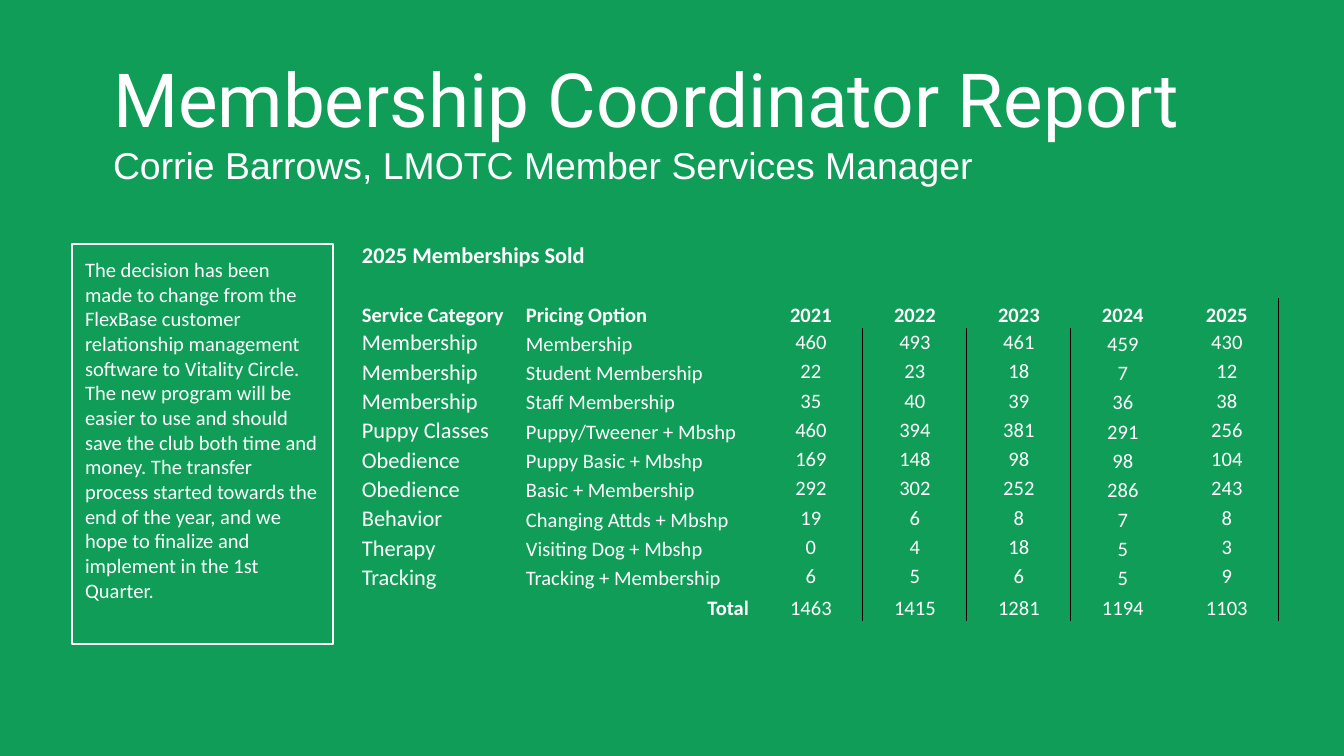
from lxml.etree import SubElement
from pptx import Presentation
from pptx.dml.color import RGBColor
from pptx.enum.shapes import MSO_SHAPE
from pptx.enum.text import MSO_ANCHOR, PP_ALIGN
from pptx.oxml.ns import qn
from pptx.util import Pt

COLORS = {"background": "0F9D58", "text": "FFFFFF", "rule": "000000"}
EMU_PER_PX = 914400 / 134.4
YEARS = ["2021", "2022", "2023", "2024", "2025"]
MEMBERSHIPS = [
    ("Membership", "Membership", 460, 493, 461, 459, 430),
    ("Membership", "Student Membership", 22, 23, 18, 7, 12),
    ("Membership", "Staff Membership", 35, 40, 39, 36, 38),
    ("Puppy Classes", "Puppy/Tweener + Mbshp", 460, 394, 381, 291, 256),
    ("Obedience", "Puppy Basic + Mbshp", 169, 148, 98, 98, 104),
    ("Obedience", "Basic + Membership", 292, 302, 252, 286, 243),
    ("Behavior", "Changing Attds + Mbshp", 19, 6, 8, 7, 8),
    ("Therapy", "Visiting Dog + Mbshp", 0, 4, 18, 5, 3),
    ("Tracking", "Tracking + Membership", 6, 5, 6, 5, 9),
]
TOTALS = [1463, 1415, 1281, 1194, 1103]
ANNOUNCEMENT = (
    "The decision has been made to change from the FlexBase customer "
    "relationship management software to Vitality Circle. The new program "
    "will be easier to use and should save the club both time and money. "
    "The transfer process started towards the end of the year, and we hope "
    "to finalize and implement in the 1st Quarter."
)


def px(length):
    return round(length * EMU_PER_PX)


def color(name):
    return RGBColor.from_string(COLORS[name])


def write_text(paragraph, text, size=11, font="Calibri", bold=False,
               align=PP_ALIGN.LEFT):
    paragraph.alignment = align
    run = paragraph.add_run()
    run.text = text
    run.font.size = Pt(size)
    run.font.name = font
    run.font.bold = bold
    run.font.color.rgb = color("text")


class SlideBuilder:
    margin = 13
    cell_margin = 10
    frame_width = 0.75
    rule_width = 0.5

    def __init__(self, slide):
        self.slide = slide
        slide.background.fill.solid()
        slide.background.fill.fore_color.rgb = color("background")

    def prepare_frame(self, frame, anchor):
        frame.word_wrap = True
        frame.vertical_anchor = anchor
        frame.margin_left = frame.margin_right = px(self.margin)
        frame.margin_top = frame.margin_bottom = px(self.margin)
        return frame

    def heading(self, left, top, width, height, title, subtitle):
        box = self.slide.shapes.add_textbox(px(left), px(top), px(width), px(height))
        frame = self.prepare_frame(box.text_frame, MSO_ANCHOR.MIDDLE)
        write_text(frame.paragraphs[0], title, size=40, font="Roboto")
        write_text(frame.add_paragraph(), subtitle, size=20, font="Arial")

    def framed_note(self, left, top, width, height, text):
        shape = self.slide.shapes.add_shape(
            MSO_SHAPE.RECTANGLE, px(left), px(top), px(width), px(height))
        shape.shadow.inherit = False
        shape.fill.background()
        shape.line.color.rgb = color("text")
        shape.line.width = Pt(self.frame_width)
        frame = self.prepare_frame(shape.text_frame, MSO_ANCHOR.TOP)
        write_text(frame.paragraphs[0], text)

    def table(self, left, top, column_widths, row_heights):
        frame = self.slide.shapes.add_table(
            len(row_heights), len(column_widths), px(left), px(top),
            px(sum(column_widths)), px(sum(row_heights)))
        table = frame.table
        table.first_row = table.horz_banding = False
        for column, width in zip(table.columns, column_widths):
            column.width = px(width)
        for row, height in zip(table.rows, row_heights):
            row.height = px(height)
        return table

    def cell(self, cell, text="", anchor=MSO_ANCHOR.BOTTOM, ruled_sides=(), **style):
        cell.margin_left = cell.margin_right = px(self.cell_margin)
        cell.margin_top = cell.margin_bottom = 0
        cell.vertical_anchor = anchor
        self.borders(cell, ruled_sides)
        cell.fill.background()
        paragraph = cell.text_frame.paragraphs[0]
        if text:
            write_text(paragraph, text, **style)
        else:
            # An empty cell must not stretch its row
            paragraph._p.get_or_add_endParaRPr().set("sz", "1100")

    def borders(self, cell, ruled_sides):
        properties = cell._tc.get_or_add_tcPr()
        for side in "LRTB":
            line = SubElement(properties, qn(f"a:ln{side}"))
            if side in ruled_sides:
                line.set("w", str(Pt(self.rule_width)))
                fill = SubElement(line, qn("a:solidFill"))
                SubElement(fill, qn("a:srgbClr")).set("val", COLORS["rule"])
            else:
                SubElement(line, qn("a:noFill"))


def ruled_sides(row, column):
    """Rules follow 2021 to 2023 below the header, and 2025 from the header."""
    def rule_after(index):
        return (index in (2, 3, 4) and row >= 3) or (index == 6 and row >= 2)

    return [side for side, index in (("L", column - 1), ("R", column))
            if rule_after(index)]


def cell_style(row, column, last_row):
    header, total = row == 2, row == last_row
    style = {"bold": row <= 2 or (total and column == 1)}
    if row == 0 or (column == 0 and not header):
        style["size"] = 12
    if column >= 2:
        style["align"] = PP_ALIGN.CENTER
        if not header and not total and column != 5:
            style["anchor"] = MSO_ANCHOR.MIDDLE
    elif total:
        style["align"] = PP_ALIGN.RIGHT
    return style


def main():
    presentation = Presentation()
    presentation.slide_width = px(1344)
    presentation.slide_height = px(756)
    builder = SlideBuilder(presentation.slides.add_slide(presentation.slide_layouts[6]))

    # Heading and announcement
    builder.heading(100, 36, 1107, 168, "Membership Coordinator Report",
                    "Corrie Barrows, LMOTC Member Services Manager")
    builder.framed_note(72, 244, 261, 400, ANNOUNCEMENT)

    # Membership table: caption, gap, header, data and totals
    rows = [
        ["2025 Memberships Sold"] + [""] * 6,
        [""] * 7,
        ["Service Category", "Pricing Option", *YEARS],
        *MEMBERSHIPS,
        ["", "Total", *TOTALS],
    ]
    body_rows = len(rows) - 1
    table = builder.table(352, 242, [164, 243] + [104] * 5,
                          [27] + [352 / body_rows] * body_rows)
    for row, values in enumerate(rows):
        for column, value in enumerate(values):
            builder.cell(table.cell(row, column), str(value),
                         ruled_sides=ruled_sides(row, column),
                         **cell_style(row, column, body_rows))
    table.cell(0, 0).merge(table.cell(0, 1))

    presentation.save("out.pptx")


if __name__ == "__main__":
    main()
